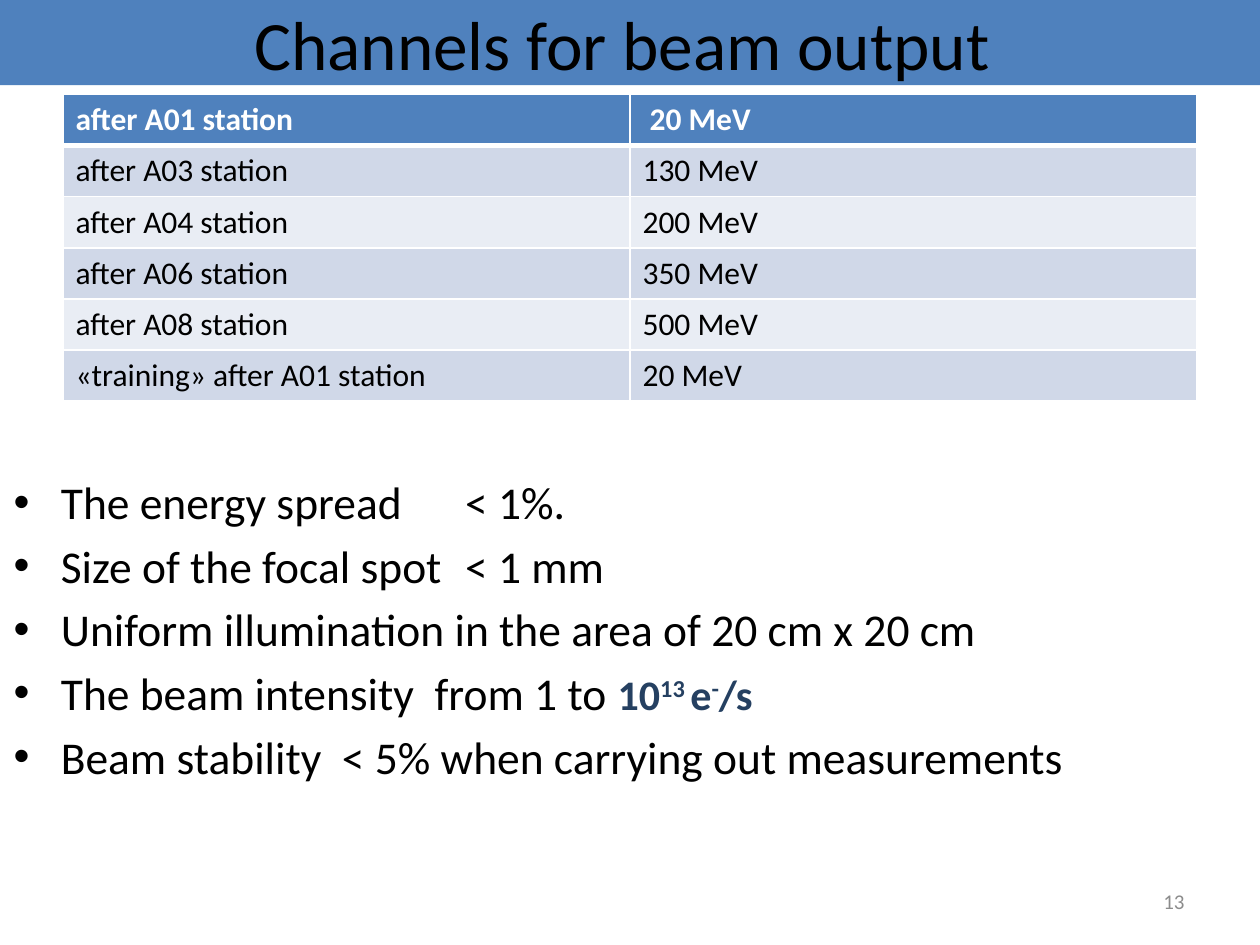
from dataclasses import dataclass

from lxml import etree
from pptx import Presentation
from pptx.dml.color import RGBColor
from pptx.enum import shapes, text
from pptx.oxml import ns
from pptx.util import Pt


@dataclass(frozen=True)
class Theme:
    font: str = "Calibri"
    blue: str = "4F81BD"
    band_dark: str = "D0D8E8"
    band_light: str = "E9EDF4"
    navy: str = "254061"
    grey: str = "8C8C8C"
    black: str = "000000"
    white: str = "FFFFFF"
    title: float = 39.6
    body: float = 26
    formula: float = 24
    table: float = 18
    number: float = 12


theme = Theme()


def write(paragraph, words, size=theme.body, color=theme.black, bold=False, baseline=0):
    run = paragraph.add_run()
    run.text = words
    run.font.name = theme.font
    run.font.size = Pt(size)
    run.font.bold = bold
    run.font.color.rgb = RGBColor.from_string(color)
    if baseline:
        run.font._element.set("baseline", str(baseline * 1000))


def add_xml(parent, tag, **attributes):
    element = etree.SubElement(parent, ns.qn(tag))
    for key, value in attributes.items():
        element.set(key, str(value))
    return element


deck = Presentation()
deck.slide_width, deck.slide_height = Pt(720), Pt(540)
slide = deck.slides.add_slide(deck.slide_layouts[6])

# Title band
title = slide.shapes.add_shape(shapes.MSO_SHAPE.RECTANGLE, 0, 0, Pt(720), Pt(48.7))
title.shadow.inherit = False
title.fill.solid()
title.fill.fore_color.rgb = RGBColor.from_string(theme.blue)
title.line.fill.background()
title.text_frame.vertical_anchor = text.MSO_ANCHOR.MIDDLE
heading = title.text_frame.paragraphs[0]
heading.alignment = text.PP_ALIGN.CENTER
write(heading, "Channels for beam output ", size=theme.title)

# Table of channels and energies
channels = [
    ("after A01 station", " 20 МeV"),
    ("after A03 station", "130 МeV"),
    ("after A04 station", "200 МeV"),
    ("after A06 station", "350 МeV"),
    ("after A08 station", "500 МeV"),
    ("«training» after A01 station", "20 МeV"),
]
energies = slide.shapes.add_table(
    len(channels), 2, Pt(36), Pt(54), Pt(648), Pt(29.2 * len(channels))
).table
for row, channel in enumerate(channels):
    header = row == 0
    band = theme.blue if header else (theme.band_light, theme.band_dark)[row % 2]
    for column, words in enumerate(channel):
        cell = energies.cell(row, column)
        write(cell.text_frame.paragraphs[0], words, size=theme.table, bold=header,
              color=theme.white if header else theme.black)
        properties = cell._tc.get_or_add_tcPr()
        for side in ("L", "R", "T", "B"):
            thick = (header and side == "B") or (row == 1 and side == "T")
            border = add_xml(properties, f"a:ln{side}", w=Pt(3 if thick else 1))
            add_xml(add_xml(border, "a:solidFill"), "a:srgbClr", val=theme.white)
        cell.fill.solid()
        cell.fill.fore_color.rgb = RGBColor.from_string(band)

# Beam parameters: each bullet is a list of text and format pairs
formula = dict(size=theme.formula, color=theme.navy, bold=True)
raised = dict(formula, baseline=30)
parameters = [
    [("The energy spread\t< 1%.", {})],
    [("Size of the focal spot\t< 1 mm", {})],
    [("Uniform illumination in the area of 20 cm x 20 cm", {})],
    [("The beam intensity  from 1 to ", {}), ("10", formula), ("13 ", raised),
     ("e", formula), ("-", raised), ("/s", formula)],
    [("Beam stability  < 5% when carrying out measurements", {})],
]
bullets = slide.shapes.add_textbox(Pt(0.7), Pt(230.4), Pt(720), Pt(311.8)).text_frame
bullets.word_wrap = True
bullets.margin_top = Pt(40.5)
for index, parameter in enumerate(parameters):
    bullet = bullets.paragraphs[0] if index == 0 else bullets.add_paragraph()
    layout = bullet._p.get_or_add_pPr()
    layout.set("marL", str(Pt(27)))
    layout.set("indent", str(Pt(-27)))
    add_xml(layout, "a:buFont", typeface="Arial")
    add_xml(layout, "a:buChar", char="•")
    add_xml(add_xml(layout, "a:tabLst"), "a:tab", pos=Pt(258), algn="l")
    if index:
        bullet.space_before = Pt(theme.body * 0.2)
    for words, style in parameter:
        write(bullet, words, **style)

# Slide number
footer = slide.shapes.add_textbox(Pt(516), Pt(500.5), Pt(168), Pt(28.8)).text_frame
footer.word_wrap = True
footer.vertical_anchor = text.MSO_ANCHOR.MIDDLE
number = footer.paragraphs[0]
number.alignment = text.PP_ALIGN.RIGHT
write(number, "13", size=theme.number, color=theme.grey)

deck.save("out.pptx")
